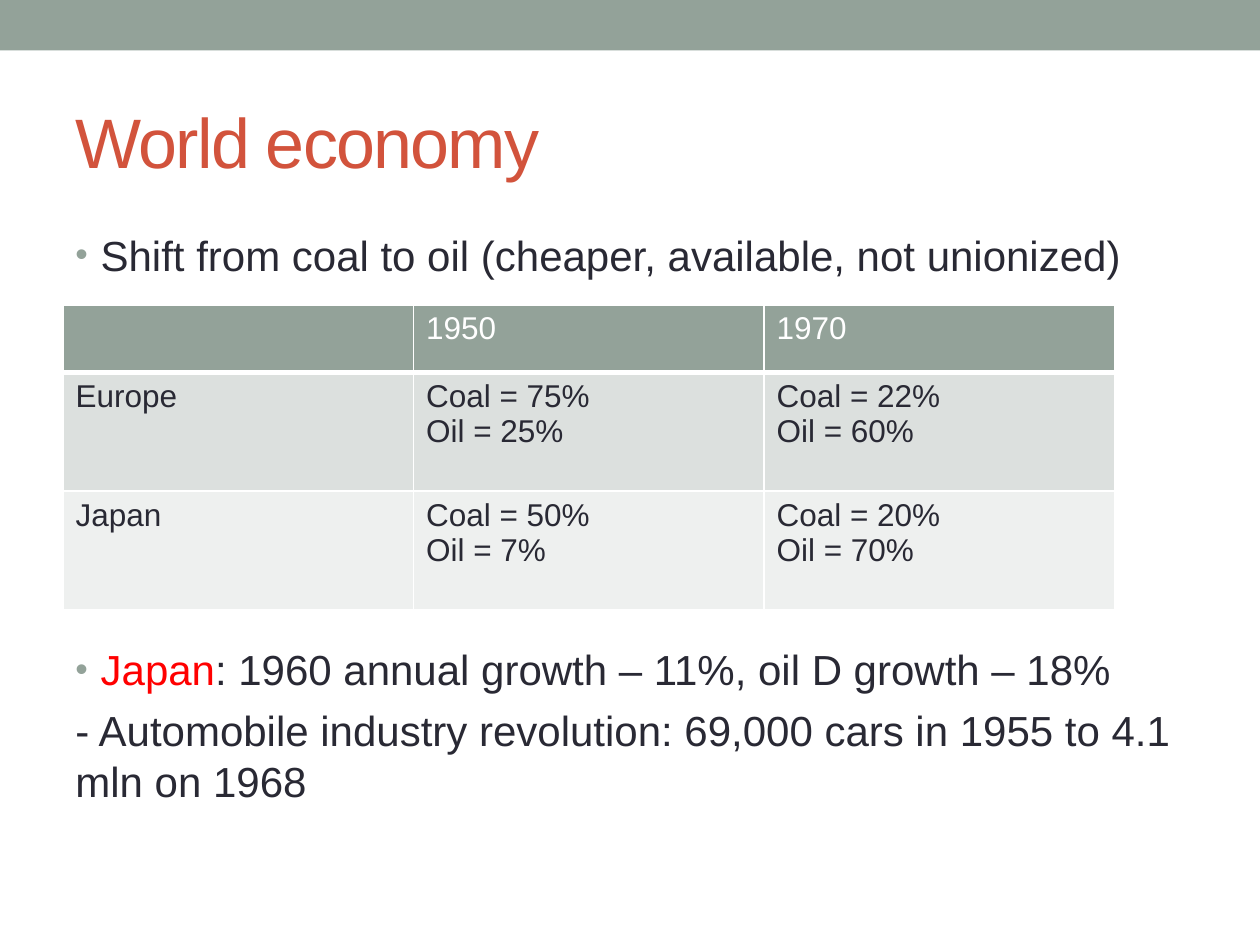
import pptx
import pptx.dml.color
import pptx.enum.shapes
import pptx.enum.text
import pptx.oxml.ns
import pptx.util
from lxml import etree

Cm = pptx.util.Cm
Pt = pptx.util.Pt
qn = pptx.oxml.ns.qn

COLORS = {
    "sage": "93A299",
    "title": "D2533C",
    "ink": "292934",
    "accent": "FF0000",
    "white": "FFFFFF",
    "europe": "DCE0DE",
    "japan": "EEF0EF",
}
ENERGY_MIX = [
    ["", "1950", "1970"],
    ["Europe", "Coal = 75%\nOil = 25%", "Coal = 22%\nOil = 60%"],
    ["Japan", "Coal = 50%\nOil = 7%", "Coal = 20%\nOil = 70%"],
]
ROW_STYLES = [("sage", "white"), ("europe", "ink"), ("japan", "ink")]
ROW_SHARES = [0.22, 0.39, 0.39]
POINTS = [
    (True, 0, [("Shift from coal to oil (cheaper, available, not unionized)", "ink")]),
    (True, 208, [("Japan", "accent"),
                 (": 1960 annual growth – 11%, oil D growth – 18%", "ink")]),
    (False, 6, [("- Automobile industry revolution: 69,000 cars in 1955 to 4.1 mln on 1968",
                 "ink")]),
]


def rgb(name):
    return pptx.dml.color.RGBColor.from_string(COLORS[name])


def style_run(run, size, color):
    for attribute, value in {"name": "Arial", "size": Pt(size)}.items():
        setattr(run.font, attribute, value)
    run.font.color.rgb = rgb(color)


def place(part, box):
    for attribute, value in zip(("left", "top", "width", "height"), box):
        setattr(part, attribute, Cm(value))


def format_frame(frame, anchor):
    settings = {
        "word_wrap": True,
        "auto_size": pptx.enum.text.MSO_AUTO_SIZE.NONE,
        "vertical_anchor": anchor,
    }
    for attribute, value in settings.items():
        setattr(frame, attribute, value)


def add_bullet(paragraph):
    properties = paragraph._p.get_or_add_pPr()
    properties.set("marL", str(Cm(0.51)))
    properties.set("indent", str(-Cm(0.51)))
    bullet_color = etree.SubElement(properties, qn("a:buClr"))
    etree.SubElement(bullet_color, qn("a:srgbClr"), val=COLORS["sage"])
    etree.SubElement(properties, qn("a:buSzPct"), val="85000")
    etree.SubElement(properties, qn("a:buFont"), typeface="Arial")
    etree.SubElement(properties, qn("a:buChar"), char="•")


def add_borders(cell, bottom_width):
    properties = cell._tc.get_or_add_tcPr()
    widths = {"a:lnL": 1, "a:lnR": 1, "a:lnT": 1, "a:lnB": bottom_width}
    for position, (side, width) in enumerate(widths.items()):
        line = etree.Element(qn(side), w=str(Pt(width)))
        fill = etree.SubElement(line, qn("a:solidFill"))
        etree.SubElement(fill, qn("a:srgbClr"), val=COLORS["white"])
        properties.insert(position, line)


def add_top_band(slide, box):
    band = slide.shapes.add_shape(
        pptx.enum.shapes.MSO_SHAPE.RECTANGLE, *map(Cm, box))
    band.shadow.inherit = False
    band.fill.solid()
    band.fill.fore_color.rgb = rgb("sage")
    band.line.fill.background()


def set_title(slide, box):
    title = slide.shapes.title
    place(title, box)
    format_frame(title.text_frame, pptx.enum.text.MSO_ANCHOR.MIDDLE)
    heading = title.text_frame.paragraphs[0]
    heading.alignment = pptx.enum.text.PP_ALIGN.LEFT
    run = heading.add_run()
    run.text = "World economy"
    style_run(run, 40, "title")
    run.font._element.set("spc", "-100")


def add_points(slide, box):
    frame = slide.shapes.add_textbox(*map(Cm, box)).text_frame
    format_frame(frame, pptx.enum.text.MSO_ANCHOR.TOP)
    for index, (bulleted, gap, pieces) in enumerate(POINTS):
        point = frame.add_paragraph() if index else frame.paragraphs[0]
        if gap:
            point.space_before = Pt(gap)
        if bulleted:
            add_bullet(point)
        for text, color in pieces:
            run = point.add_run()
            run.text = text
            style_run(run, 24, color)


def add_energy_table(slide, box):
    width, height = box[2:]
    table = slide.shapes.add_table(
        len(ENERGY_MIX), len(ENERGY_MIX[0]), *map(Cm, box)).table
    for column in table.columns:
        column.width = Cm(width / len(ENERGY_MIX[0]))
    for index, values in enumerate(ENERGY_MIX):
        fill, ink = ROW_STYLES[index]
        table.rows[index].height = Cm(height * ROW_SHARES[index])
        for cell, text in zip(table.rows[index].cells, values):
            cell.text = text
            cell.fill.solid()
            cell.fill.fore_color.rgb = rgb(fill)
            add_borders(cell, 1 if index else 3)
            for paragraph in cell.text_frame.paragraphs:
                for run in paragraph.runs:
                    style_run(run, 18, ink)
                    run.font.bold = False


def main():
    deck = pptx.Presentation()
    deck.slide_width, deck.slide_height = Cm(25.4), Cm(19.05)
    slide = deck.slides.add_slide(deck.slide_layouts[5])
    add_top_band(slide, (0, 0, 25.4, 1.02))
    set_title(slide, (1.27, 1.47, 22.86, 2.74))
    add_points(slide, (1.27, 4.5, 22.86, 13.5))
    add_energy_table(slide, (1.27, 6.15, 21.2, 6.15))
    deck.save("out.pptx")


if __name__ == "__main__":
    main()
